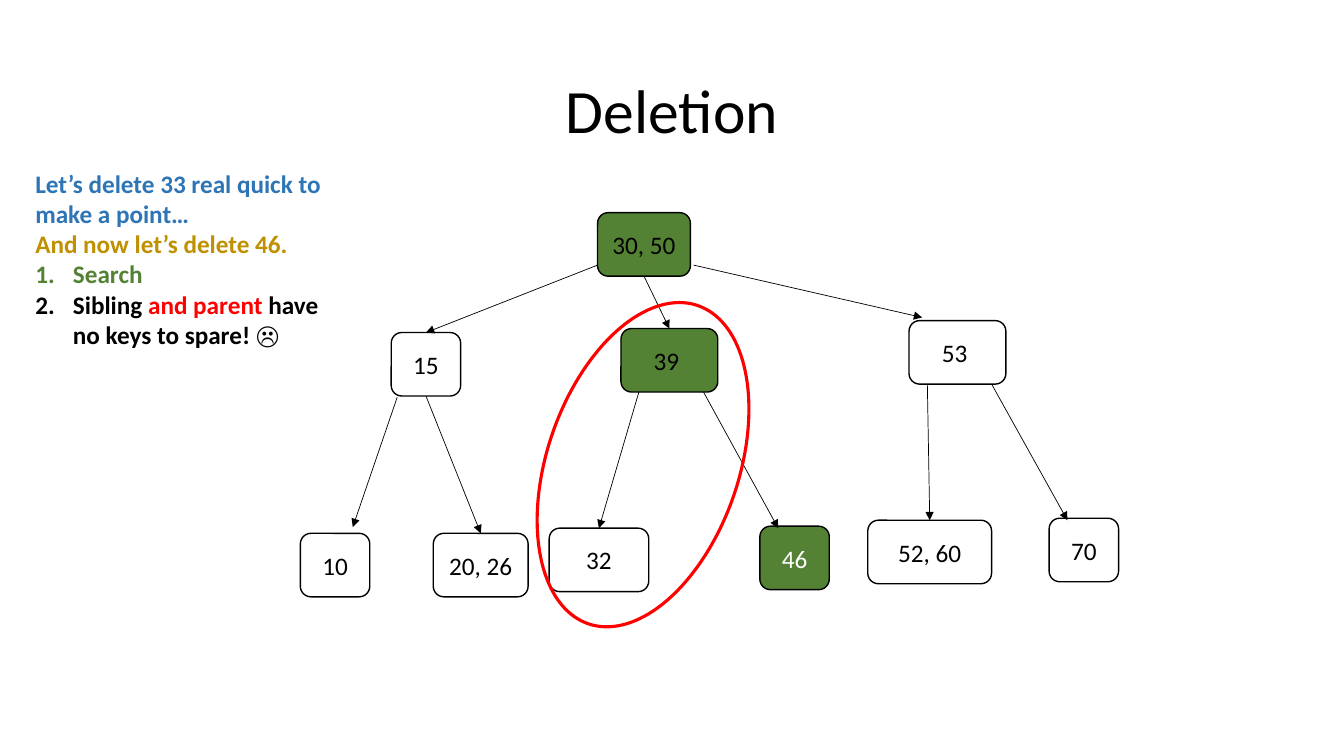
import pptx
import pptx.dml.color
import pptx.enum.shapes
import pptx.enum.text
import pptx.oxml
import pptx.oxml.ns
import pptx.util
from dataclasses import dataclass

Cm = pptx.util.Cm
Pt = pptx.util.Pt
Shape = pptx.enum.shapes.MSO_SHAPE
Align = pptx.enum.text.PP_ALIGN
Anchor = pptx.enum.text.MSO_ANCHOR


@dataclass(frozen=True)
class Theme:
    font: str = "Calibri"
    black: str = "000000"
    white: str = "FFFFFF"
    green: str = "548235"
    blue: str = "2E75B6"
    gold: str = "BF9000"
    red: str = "FF0000"
    title: float = 44
    body: float = 18
    thin: float = 0.5
    edge: float = 1
    ring: float = 2.25


def color(code):
    return pptx.dml.color.RGBColor.from_string(code)


def add_xml(parent, tag, **attrs):
    node = pptx.oxml.parse_xml(f"<a:{tag} {pptx.oxml.ns.nsdecls('a')}/>")
    for key, value in attrs.items():
        node.set(key, value)
    parent.append(node)


class Board:
    def __init__(self, slide, theme):
        self.slide = slide
        self.theme = theme

    def add_run(self, para, text, code, size, bold=False):
        run = para.add_run()
        run.text = text
        run.font.name = self.theme.font
        run.font.size = Pt(size)
        run.font.bold = bold
        run.font.color.rgb = color(code)

    def shape(self, kind, place, line, width, fill=None):
        item = self.slide.shapes.add_shape(kind, *map(Cm, place))
        item.shadow.inherit = False
        if fill:
            item.fill.solid()
            item.fill.fore_color.rgb = color(fill)
        else:
            item.fill.background()
        item.line.color.rgb = color(line)
        item.line.width = Pt(width)
        return item

    def node(self, text, left, top, width, fill=None, ink=None):
        theme = self.theme
        place = (left, top, width, 1.6)
        item = self.shape(Shape.ROUNDED_RECTANGLE, place, theme.black, theme.edge, fill)
        frame = item.text_frame
        frame.word_wrap = True
        frame.vertical_anchor = Anchor.MIDDLE
        para = frame.paragraphs[0]
        para.alignment = Align.CENTER
        self.add_run(para, text, ink or theme.black, theme.body)
        return item

    def ring(self, place, angle):
        item = self.shape(Shape.OVAL, place, self.theme.red, self.theme.ring)
        item.rotation = angle

    def arrow(self, start, end):
        ends = [p if isinstance(p, tuple) else (0, 0) for p in (start, end)]
        line = self.slide.shapes.add_connector(
            pptx.enum.shapes.MSO_CONNECTOR.STRAIGHT, *[Cm(v) for p in ends for v in p])
        if not isinstance(start, tuple):
            line.begin_connect(start, 2)
        if not isinstance(end, tuple):
            line.end_connect(end, 0)
        line.line.color.rgb = color(self.theme.black)
        line.line.width = Pt(self.theme.thin)
        props = line._element.spPr
        add_xml(props.find(pptx.oxml.ns.qn("a:ln")), "tailEnd", type="triangle")
        add_xml(props, "effectLst")

    def frame(self, place):
        frame = self.slide.shapes.add_textbox(*map(Cm, place)).text_frame
        frame.word_wrap = True
        return frame

    def title(self, text, place):
        frame = self.frame(place)
        frame.vertical_anchor = Anchor.MIDDLE
        para = frame.paragraphs[0]
        para.alignment = Align.CENTER
        para.line_spacing = 0.9
        self.add_run(para, text, self.theme.black, self.theme.title)

    def notes(self, rows, place):
        frame = self.frame(place)
        frame.auto_size = pptx.enum.text.MSO_AUTO_SIZE.SHAPE_TO_FIT_TEXT
        for i, (step, runs) in enumerate(rows):
            para = frame.add_paragraph() if i else frame.paragraphs[0]
            if step:
                props = para._p.get_or_add_pPr()
                indent = Cm(0.95)
                props.set("marL", str(int(indent)))
                props.set("indent", str(-int(indent)))
                add_xml(props, "buFont", typeface="+mj-lt")
                add_xml(props, "buAutoNum", type="arabicPeriod")
            for text, code in runs:
                self.add_run(para, text, code, self.theme.body, True)


def main():
    deck = pptx.Presentation()
    deck.slide_width = Cm(33.87)
    deck.slide_height = Cm(19.05)
    theme = Theme()
    board = Board(deck.slides.add_slide(deck.slide_layouts[6]), theme)

    board.title("Deletion", (2.33, 1.02, 29.21, 3.68))

    root = board.node("30, 50 ", 15.06, 5.36, 2.34, theme.green)
    left = board.node("15", 9.86, 8.38, 1.75)
    mid = board.node("39 ", 15.65, 8.28, 2.44, theme.green)
    board.node("53 ", 22.91, 8.08, 2.44)
    board.node("10", 7.57, 13.44, 1.75)
    twenty = board.node("20, 26", 10.92, 13.44, 2.39)
    thirty = board.node("32", 13.84, 13.31, 2.51)
    board.node("46", 19.15, 13.26, 1.75, theme.green, theme.white)
    fifty = board.node("52, 60", 21.87, 13.11, 3.12)
    board.node("70", 26.44, 13.06, 1.75)

    for start, end in (
        ((15.06, 6.68), left),
        (root, mid),
        ((17.48, 6.68), (23.24, 8)),
        ((10.01, 10.01), (8.89, 13.28)),
        (left, twenty),
        ((16.1, 9.88), thirty),
        ((17.73, 9.88), (19.61, 13.31)),
        ((23.37, 9.68), fifty),
        ((24.99, 9.68), (26.9, 13.11)),
    ):
        board.arrow(start, end)

    board.notes((
        (False, [("Let’s delete 33 real quick to make a point…", theme.blue)]),
        (False, [("And now let’s delete 46.", theme.gold)]),
        (True, [("Search", theme.green)]),
        (True, [("Sibling ", theme.black), ("and parent ", theme.red),
                ("have no keys to spare! ☹", theme.black)]),
    ), (0.64, 4.11, 8.18, 4.88))

    board.ring((13.79, 7.47, 4.83, 8.48), 19)
    deck.save("out.pptx")


if __name__ == "__main__":
    main()
